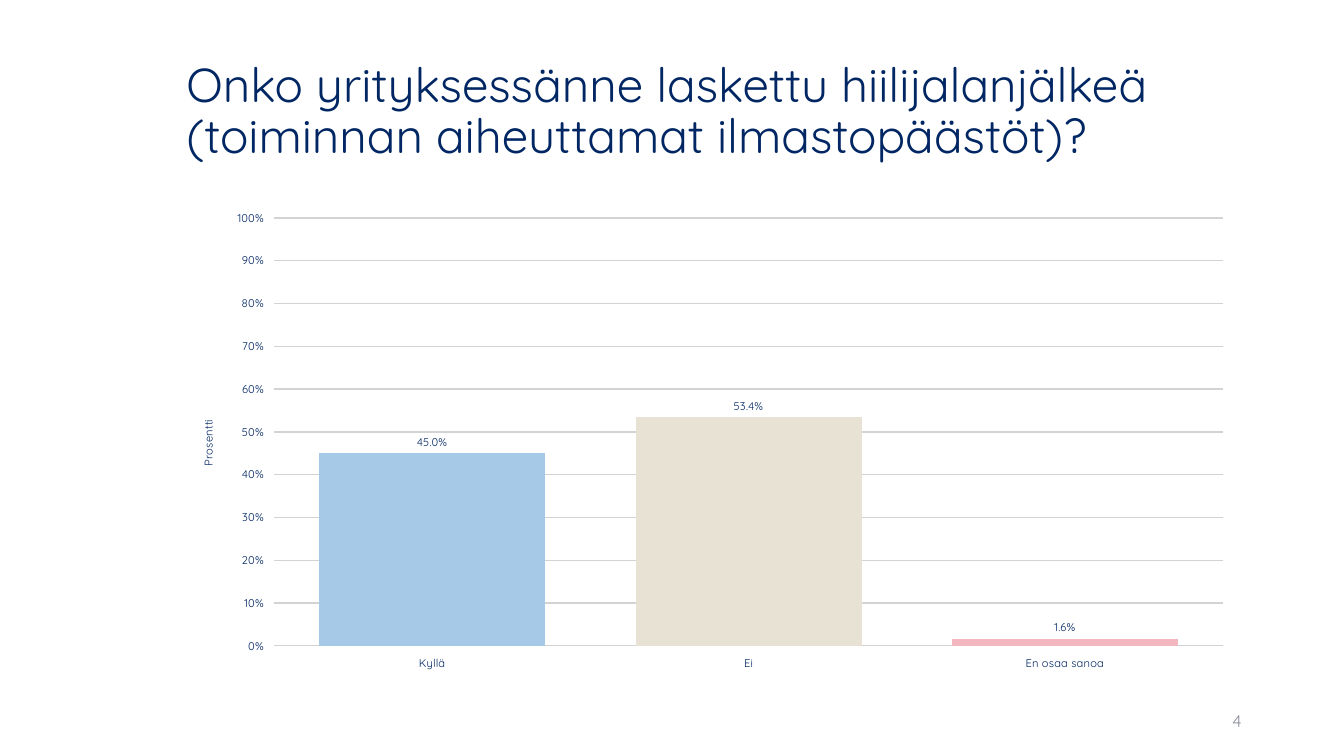
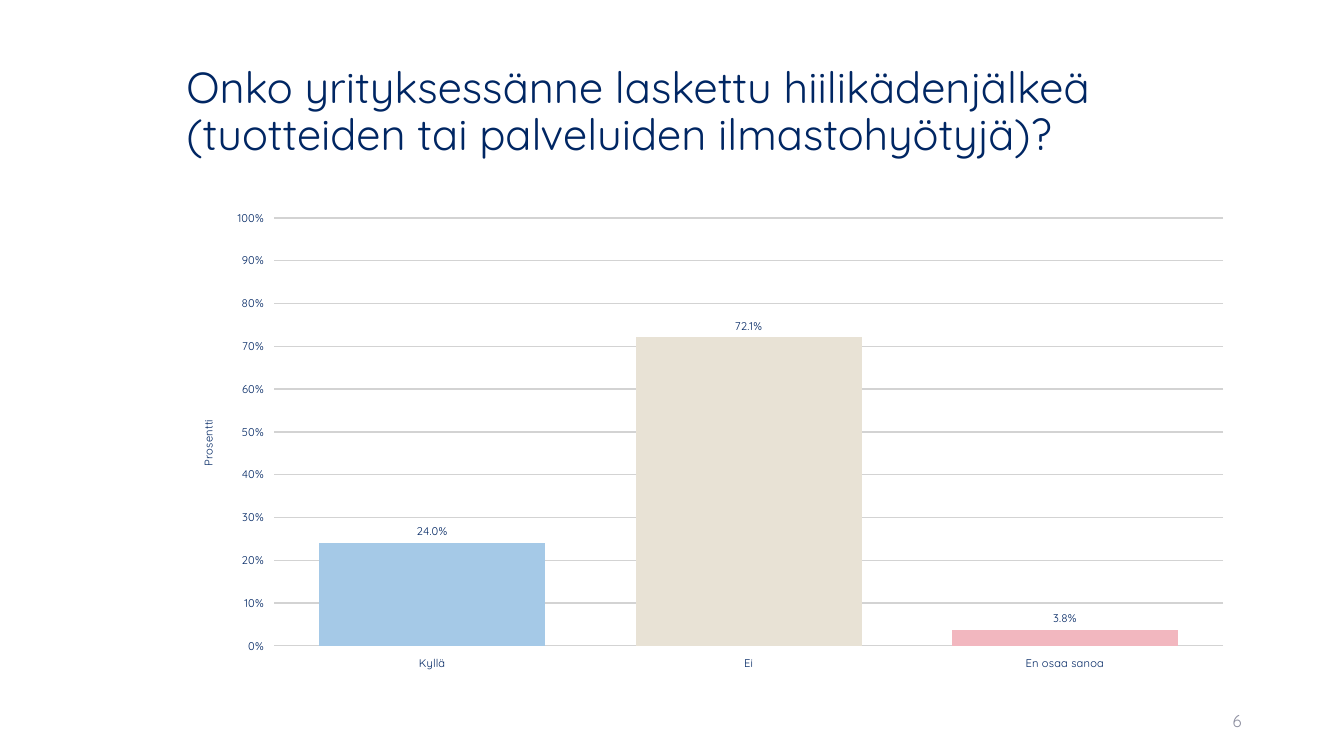
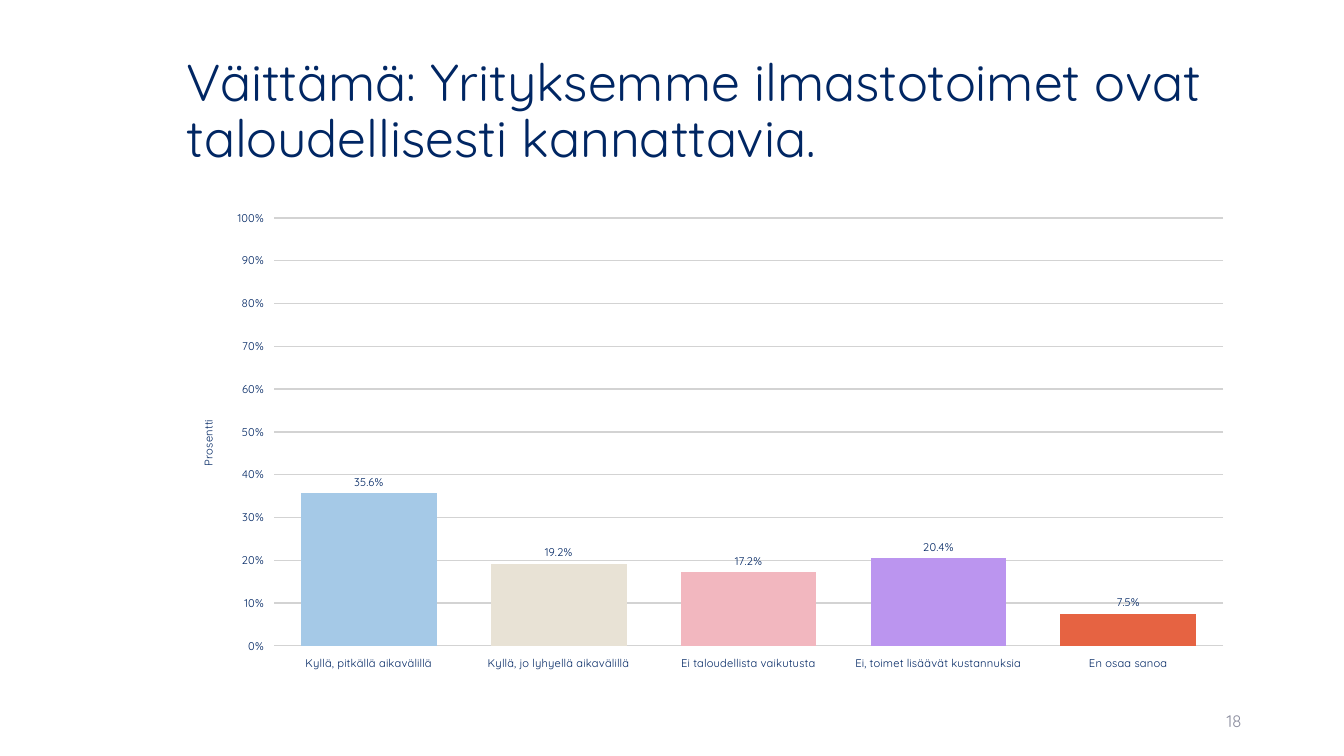
"""Build three survey result slides, each with a question and a column chart."""
from lxml.etree import SubElement
from pptx import Presentation
from pptx.chart.data import CategoryChartData
from pptx.dml.color import RGBColor
from pptx.enum.chart import XL_CHART_TYPE as ChartType, XL_LABEL_POSITION as LabelPosition
from pptx.enum.text import MSO_ANCHOR as Anchor, MSO_AUTO_SIZE as AutoSize, PP_ALIGN as Align
from pptx.oxml.ns import qn
from pptx.util import Pt

EMU_PER_PX = 9525
FONT = "Quicksand"
NAVY, GREY, GRID = "002663", "8C8E9F", "D3D3D3"
BAR_COLOURS = ["A5C9E7", "E8E2D5", "F2B7BF", "BB95EF", "E66342"]
TITLE_AREA = (168, 38, 1017, 139)
CHART_AREA = (168, 192, 1017, 457)
NUMBER_AREA = (904, 667, 288, 38)
YES_NO = ["Kyllä", "Ei", "En osaa sanoa"]
PROFIT = ["Kyllä, pitkällä aikavälillä", "Kyllä, jo lyhyellä aikavälillä",
          "Ei taloudellista vaikutusta", "Ei, toimet lisäävät kustannuksia",
          "En osaa sanoa"]
RESULTS = [
    (4, 34, "Onko yrityksessänne laskettu hiilijalanjälkeä "
     "(toiminnan aiheuttamat ilmastopäästöt)?", YES_NO, [0.45, 0.534, 0.016]),
    (6, 31, "Onko yrityksessänne laskettu hiilikädenjälkeä "
     "(tuotteiden tai palveluiden ilmastohyötyjä)?", YES_NO, [0.24, 0.721, 0.038]),
    (18, 37, "Väittämä: Yrityksemme ilmastotoimet ovat taloudellisesti kannattavia.",
     PROFIT, [0.356, 0.192, 0.172, 0.204, 0.075]),
]


def px(*lengths):
    return [length * EMU_PER_PX for length in lengths]


def colour(value):
    return RGBColor.from_string(value)


def set_font(font, size, fill=NAVY):
    font.name, font.size, font.bold = FONT, Pt(size), False
    font.color.rgb = colour(fill)


def write(frame, text, size, fill=NAVY, align=Align.LEFT, line=1.0, after=0):
    frame.word_wrap = True
    frame.auto_size = AutoSize.NONE
    frame.vertical_anchor = Anchor.MIDDLE
    para = frame.paragraphs[0]
    para.alignment, para.line_spacing, para.space_after = align, line, Pt(after)
    span = para.add_run()
    span.text = text
    set_font(span.font, size, fill)


def set_layout(parent, **settings):
    for old in parent.findall(qn("c:layout")):
        parent.remove(old)
    layout = SubElement(parent, qn("c:layout"))
    parent.insert(len(parent.findall(qn("c:tx"))), layout)
    manual = SubElement(layout, qn("c:manualLayout"))
    for name, value in settings.items():
        SubElement(manual, qn(f"c:{name}")).set("val", str(value))


class Deck:
    def __init__(self):
        self.deck = Presentation()
        self.deck.slide_width, self.deck.slide_height = px(1280, 720)
        self.page = None

    def add_page(self):
        self.page = self.deck.slides.add_slide(self.deck.slide_layouts[5])

    def title(self, text, size):
        box = self.page.shapes.title
        box.left, box.top, box.width, box.height = px(*TITLE_AREA)
        write(box.text_frame, text, size, line=0.9)

    def number(self, value):
        box = self.page.shapes.add_textbox(*px(*NUMBER_AREA))
        write(box.text_frame, str(value), 12, fill=GREY, align=Align.RIGHT, after=6)

    def column_chart(self, categories, values):
        data = CategoryChartData()
        data.categories = categories
        data.add_series("Series 1", values)
        chart = self.page.shapes.add_chart(
            ChartType.COLUMN_CLUSTERED, *px(*CHART_AREA), data).chart
        chart.has_legend = chart.has_title = False
        set_font(chart.font, 18)
        plot = chart.plots[0]
        plot.gap_width, plot.overlap, plot.vary_by_categories = 40, -2, False
        self.bars(plot)
        self.axes(chart)
        set_layout(chart.element.find(".//" + qn("c:plotArea")),
                   layoutTarget="inner", xMode="edge", yMode="edge",
                   x=0.0914, y=0.034, w=0.889, h=0.892)

    def bars(self, plot):
        series = plot.series[0]
        for index, _ in enumerate(series.values):
            fill = series.points[index].format.fill
            fill.solid()
            fill.fore_color.rgb = colour(BAR_COLOURS[index])
        plot.has_data_labels = True
        labels = plot.data_labels
        labels.show_value = True
        labels.number_format, labels.number_format_is_linked = "0.0%", False
        labels.position = LabelPosition.OUTSIDE_END
        set_font(labels.font, 8)

    def axes(self, chart):
        for axis in (chart.category_axis, chart.value_axis):
            set_font(axis.tick_labels.font, 8)
            axis.format.line.fill.background()
        axis = chart.value_axis
        axis.minimum_scale, axis.maximum_scale, axis.major_unit = 0, 1, 0.1
        axis.tick_labels.number_format = "0%"
        axis.tick_labels.number_format_is_linked = False
        line = axis.major_gridlines.format.line
        line.width, line.color.rgb = Pt(1), colour(GRID)
        span = axis.axis_title.text_frame.paragraphs[0].add_run()
        span.text = "Prosentti"
        set_font(span.font, 8)
        title = chart.element.find(".//" + qn("c:valAx")).find(qn("c:title"))
        title.find(".//" + qn("a:bodyPr")).set("rot", "-5400000")
        set_layout(title, xMode="edge", yMode="edge", x=0.02, y=0.45)

    def save(self):
        self.deck.save("out.pptx")


def main():
    deck = Deck()
    for number, size, question, categories, values in RESULTS:
        deck.add_page()
        deck.title(question, size)
        deck.number(number)
        deck.column_chart(categories, values)
    deck.save()


if __name__ == "__main__":
    main()
